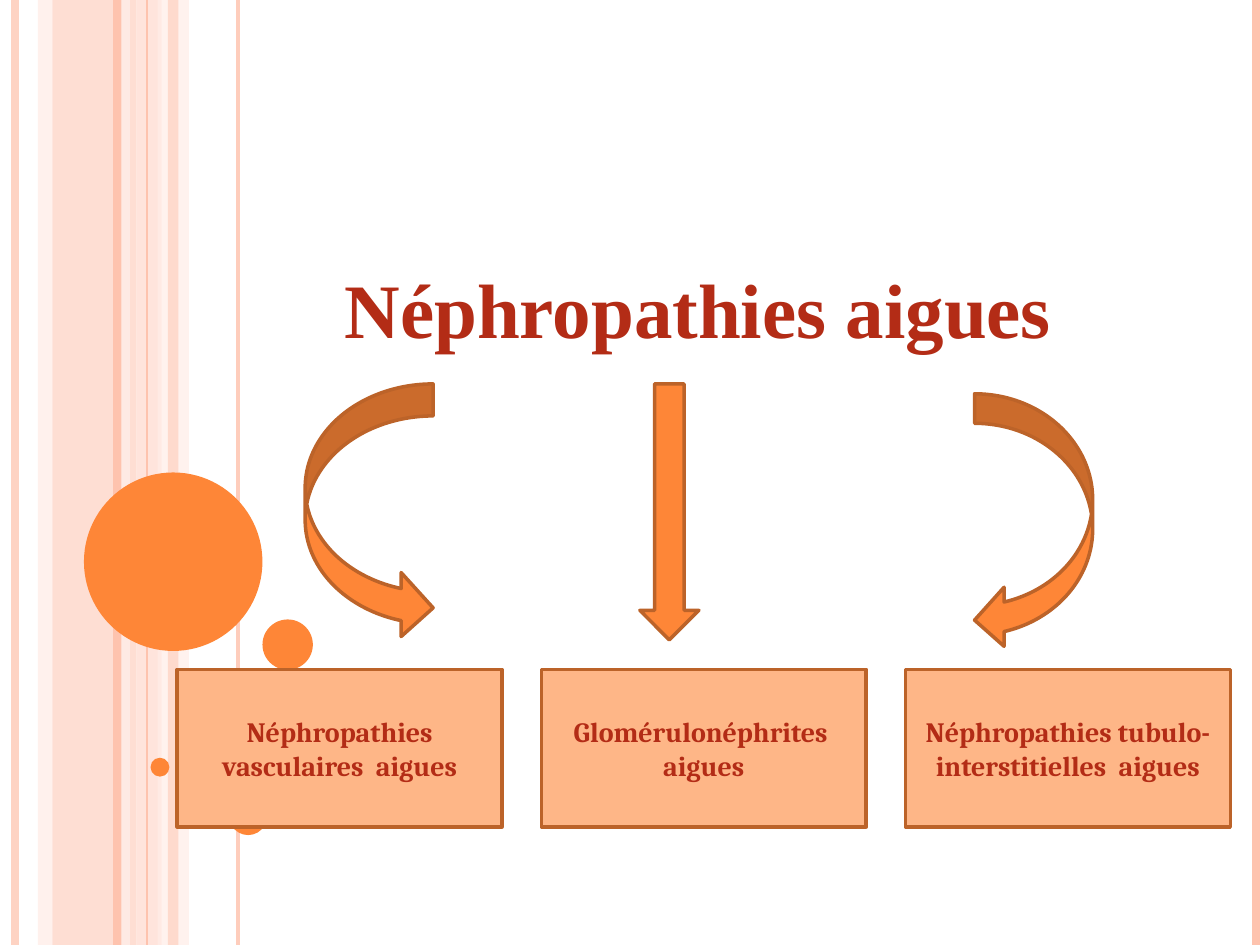
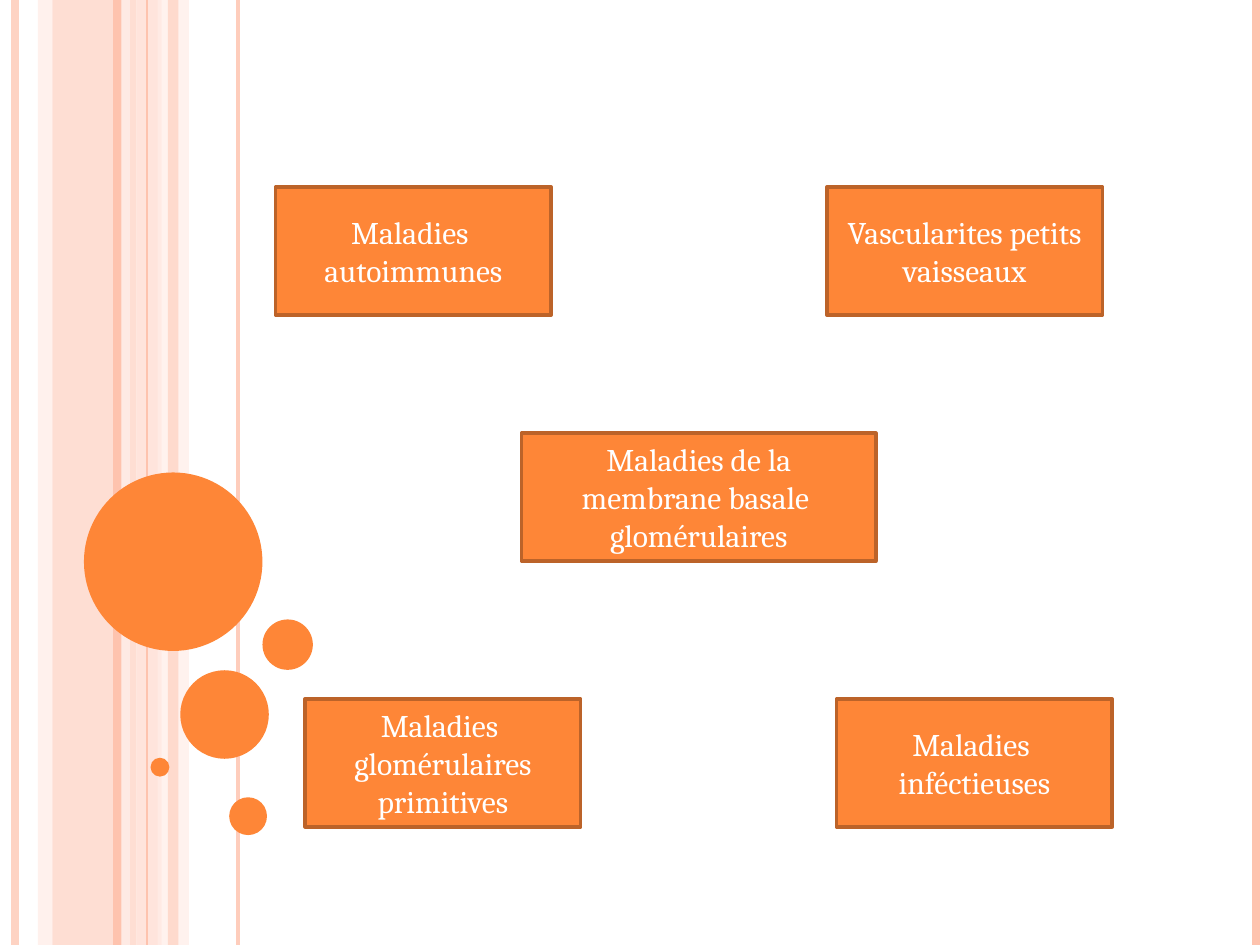
from lxml.etree import SubElement
from pptx import Presentation
from pptx.dml.color import RGBColor
from pptx.enum.shapes import MSO_CONNECTOR, MSO_SHAPE
from pptx.enum.text import MSO_ANCHOR, MSO_AUTO_SIZE, PP_ALIGN
from pptx.oxml.ns import qn
from pptx.util import Pt

WIDE, HIGH = 720, 540
ORANGE = RGBColor(0xFE, 0x86, 0x37)
PEACH = RGBColor(0xFE, 0xB6, 0x87)
BROWN = RGBColor(0xBC, 0x63, 0x29)
RED = RGBColor(0xB3, 0x2C, 0x16)
WHITE = RGBColor(0xFF, 0xFF, 0xFF)
ROSE = RGBColor(0xFE, 0xC3, 0xAE)
BLUSH = RGBColor(0xFF, 0xD9, 0xCE)
MIST = RGBColor(0xFF, 0xED, 0xE8)

# left, width, colour, opacity in percent
BANDS = [
    (30, 48, ROSE, 54),
    (21.6, 8.4, BLUSH, 36),
    (78, 14.4, BLUSH, 70),
    (90, 18, MIST, 71),
    (96, 6, ROSE, 51),
]
# x, weight, colour, opacity in percent
STRIPES = [
    (8.6, 4.5, ROSE, 73),
    (72, 4.5, MIST, 83),
    (67, 4.5, ROSE, 100),
    (136, 2.25, ROSE, 82),
    (84, 0.75, ROSE, 100),
    (717.8, 4.5, ROSE, 100),
]
# left, top, diameter
BUBBLES = [
    (48, 270, 102),
    (103, 383, 50.6),
    (86, 433, 10.8),
    (131, 455.6, 21.6),
    (150, 354, 28.8),
]


def fade(fill, alpha):
    """Give a solid fill an opacity in percent."""
    if alpha < 100:
        color = fill._xPr.find(qn("a:solidFill"))[0]
        SubElement(color, qn("a:alpha"), val=str(alpha * 1000))


class Deck:
    def __init__(self):
        self.prs = Presentation()
        self.prs.slide_width, self.prs.slide_height = Pt(WIDE), Pt(HIGH)
        self.slide = None

    def page(self):
        """Start a slide with the shared bands, stripes and bubbles."""
        self.slide = self.prs.slides.add_slide(self.prs.slide_layouts[6])
        for left, width, color, alpha in BANDS:
            band = self.shape(MSO_SHAPE.RECTANGLE, left, 0, width, HIGH, color)
            fade(band.fill, alpha)
        for stripe in STRIPES:
            self.stripe(*stripe)
        for left, top, size in BUBBLES:
            self.shape(MSO_SHAPE.OVAL, left, top, size, size, ORANGE)

    def shape(self, kind, left, top, width, height, color, edge=None):
        shape = self.slide.shapes.add_shape(
            kind, Pt(left), Pt(top), Pt(width), Pt(height))
        shape.shadow.inherit = False
        shape.fill.solid()
        shape.fill.fore_color.rgb = color
        if edge is None:
            shape.line.fill.background()
        else:
            shape.line.color.rgb = edge
            shape.line.width = Pt(2)
        return shape

    def stripe(self, x, weight, color, alpha):
        line = self.slide.shapes.add_connector(
            MSO_CONNECTOR.STRAIGHT, Pt(x), 0, Pt(x), Pt(HIGH))
        line.line.color.rgb = color
        line.line.width = Pt(weight)
        fade(line.line.fill, alpha)
        SubElement(line._element.spPr, qn("a:effectLst"))

    def label(self, frame, text, size, font, color, bold):
        frame.word_wrap = True
        frame.text = text
        para = frame.paragraphs[0]
        para.alignment = PP_ALIGN.CENTER
        style = para.runs[0].font
        style.size, style.name, style.bold = Pt(size), font, bold
        style.color.rgb = color

    def title(self, text, left, top, width, height):
        box = self.slide.shapes.add_textbox(
            Pt(left), Pt(top), Pt(width), Pt(height))
        self.label(box.text_frame, text, 44, "Times New Roman", RED, True)
        box.text_frame.auto_size = MSO_AUTO_SIZE.SHAPE_TO_FIT_TEXT

    def box(self, text, left, top, width, height,
            fill=ORANGE, size=18, color=WHITE, bold=False):
        box = self.shape(
            MSO_SHAPE.RECTANGLE, left, top, width, height, fill, BROWN)
        box.text_frame.vertical_anchor = MSO_ANCHOR.MIDDLE
        self.label(box.text_frame, text, size, "Cambria", color, bold)

    def arrow(self, kind, left, top, width):
        self.shape(kind, left, top, width, 146.25, ORANGE, BROWN)


def types(deck):
    deck.page()
    deck.title("Néphropathies aigues", 106.5, 146, 585, 60.5)
    names = [
        "Néphropathies vasculaires  aigues",
        "Glomérulonéphrites  aigues",
        "Néphropathies tubulo-interstitielles  aigues",
    ]
    for i, name in enumerate(names):
        deck.box(name, 101.3 + 208.1 * i, 382.5, 185.6, 90,
                 PEACH, 16, RED, True)
    deck.arrow(MSO_SHAPE.CURVED_LEFT_ARROW, 556.9, 225, 67.5)
    deck.arrow(MSO_SHAPE.CURVED_RIGHT_ARROW, 174.4, 219.4, 73.1)
    deck.arrow(MSO_SHAPE.DOWN_ARROW, 365.6, 219.4, 33.75)


def causes(deck):
    deck.page()
    side, mid = 157.5, 202.5
    for name, left, top, width in [
        ("Maladies  autoimmunes", 157.5, 106.9, side),
        ("Vascularites petits vaisseaux", 472.5, 106.9, side),
        ("Maladies de la membrane basale  glomérulaires", 298.1, 247.5, mid),
        ("Maladies  glomérulaires primitives", 174.4, 399.4, side),
        ("Maladies  inféctieuses", 478.1, 399.4, side),
    ]:
        deck.box(name, left, top, width, 73.1)


def main():
    deck = Deck()
    types(deck)
    causes(deck)
    deck.prs.save("out.pptx")


if __name__ == "__main__":
    main()
